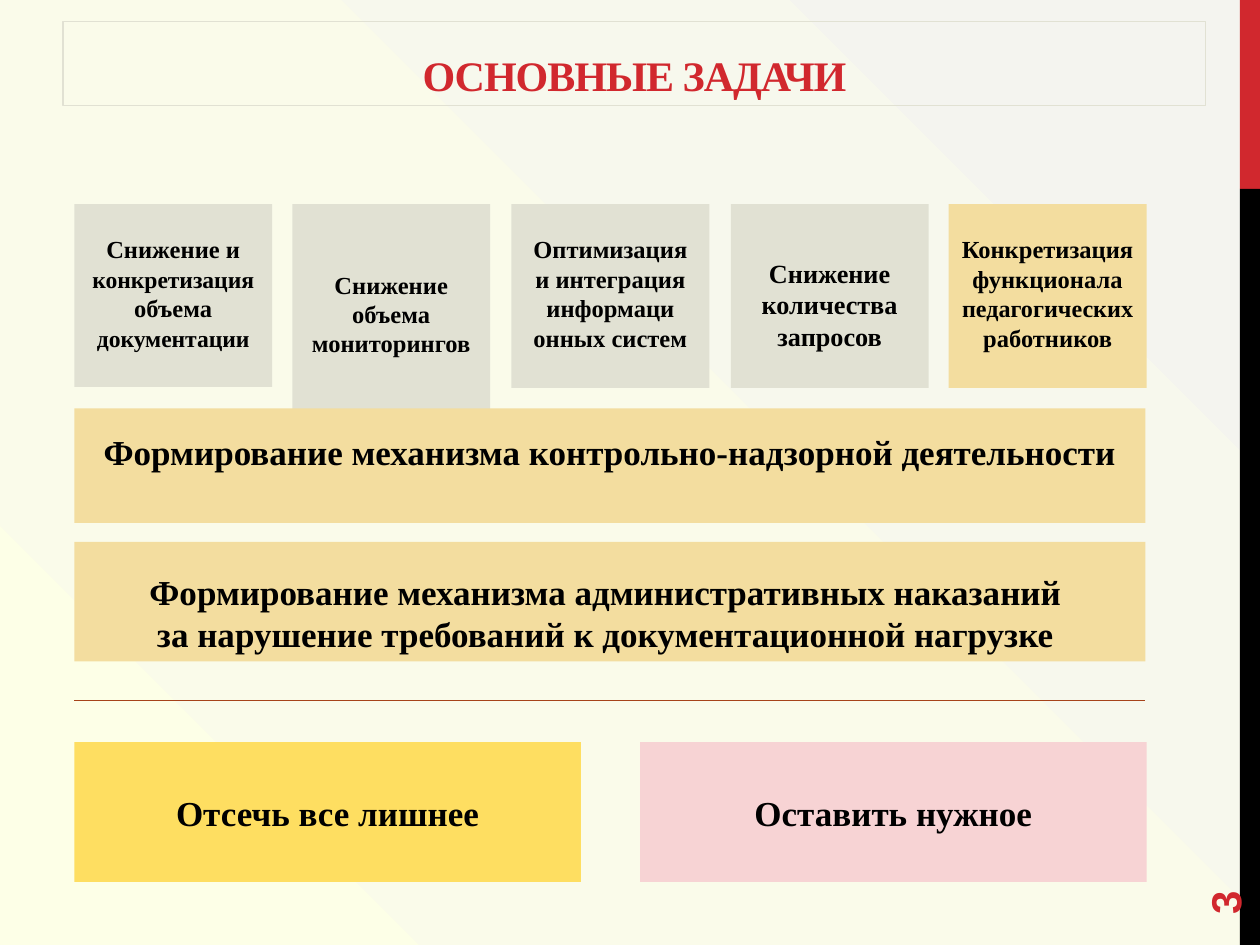
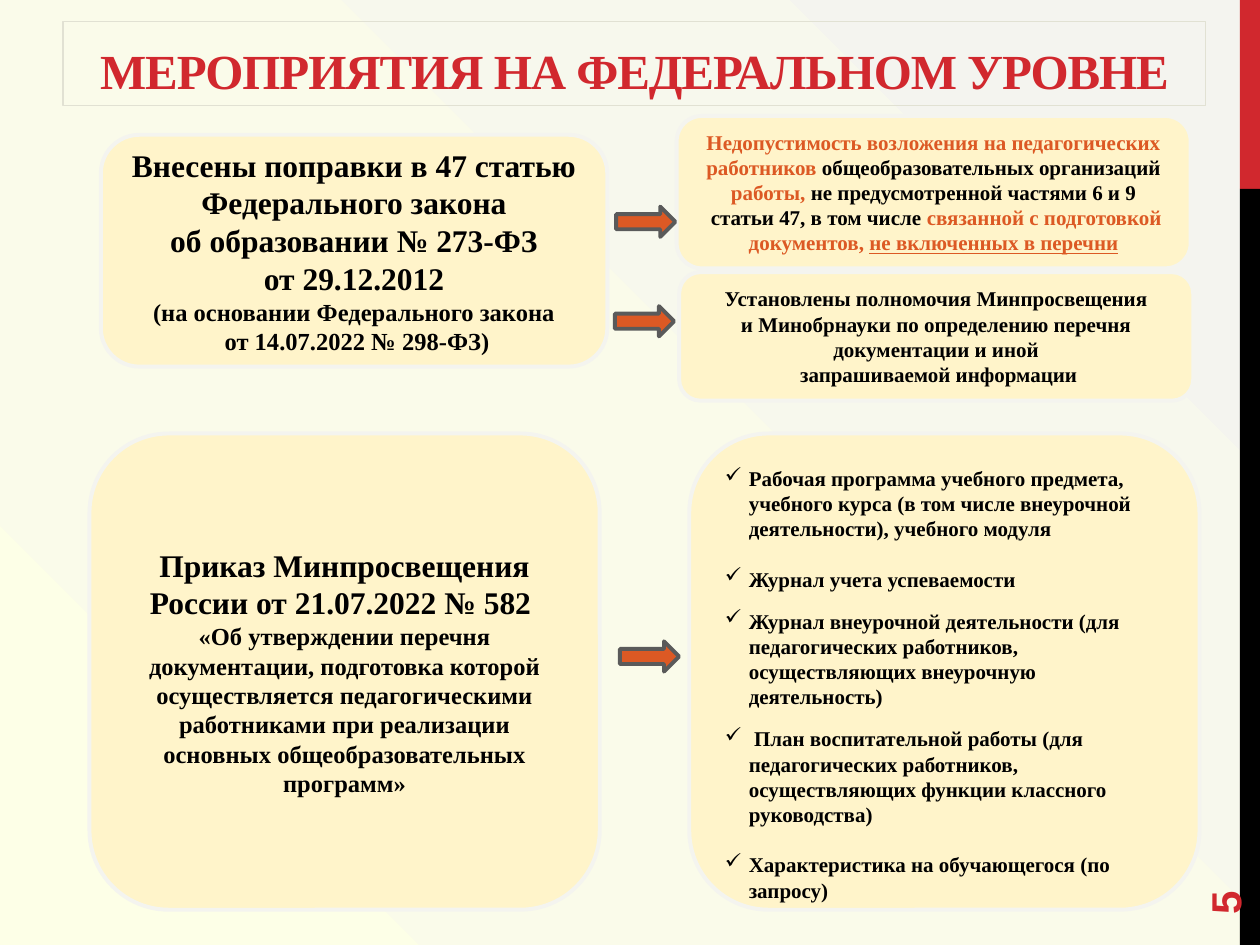
from pptx import Presentation
from pptx.dml.color import RGBColor
from pptx.enum.shapes import MSO_CONNECTOR, MSO_SHAPE
from pptx.enum.text import MSO_ANCHOR, MSO_AUTO_SIZE, PP_ALIGN
from pptx.oxml import parse_xml
from pptx.oxml.ns import nsdecls
from pptx.util import Emu, Pt

RECTANGLE = MSO_SHAPE.RECTANGLE
ROUNDED = MSO_SHAPE.ROUNDED_RECTANGLE
ARROW = MSO_SHAPE.RIGHT_ARROW
STRAIGHT = MSO_CONNECTOR.STRAIGHT
TOP, MIDDLE, BOTTOM = MSO_ANCHOR.TOP, MSO_ANCHOR.MIDDLE, MSO_ANCHOR.BOTTOM
LEFT, CENTER = PP_ALIGN.LEFT, PP_ALIGN.CENTER
NO_AUTOFIT = MSO_AUTO_SIZE.NONE

EMU_PER_PX = 9144
SERIF, SANS = "Times New Roman", "Arial"
LINE_RATIO = 1.2
RED, BLACK, ORANGE = "D1282E", "000000", "DC5924"
GREY, SAND, YELLOW, PINK = "E1E1D3", "F3DD9F", "FEDE61", "F7D3D4"
CREAM, CREAM_EDGE, ARROW_EDGE, RULE = "FFF4CA", "F4F4EF", "5A5A5A", "A6431A"
BACKGROUND_STOPS = ((0, "FDFFE7"), (38, "FAFBEA"), (99, "F4F4EF"))

TASKS = (
    ([("Снижение и ", 14), ("конкретизация", 13.5), (" объема ", 14),
      ("документации", 13.5)], 14, 145, 24, GREY),
    ("Снижение объема мониторингов", 14, 175, 52, GREY),
    ("Оптимизация и интеграция информаци\nонных систем", 14, 146, 24, GREY),
    ("Снижение количества запросов", 15, 146, 42, GREY),
    ([("Конкретизация функционала ", 14), ("педагогических", 13.8),
      (" работников", 14)], 14, 146, 24, SAND),
)
BARS = (
    ("Формирование механизма контрольно-надзорной деятельности", 324, 91, 18),
    ("Формирование механизма административных наказаний \n"
     "за нарушение требований к документационной нагрузке ", 430, 95, 23),
)
GOALS = (("Отсечь все лишнее", 59, YELLOW), ("Оставить нужное", 508, PINK))

AMENDMENT = (
    ("Внесены поправки в 47 статью Федерального закона", 18),
    ("об образовании № 273-ФЗ", 18),
    ("от 29.12.2012", 18),
    ("(на основании Федерального закона", 14),
    (" от 14.07.2022 № 298-ФЗ)", 14),
)
ORDER = (
    ("Приказ Минпросвещения России от 21.07.2022 № 582 ", 18),
    ("«Об утверждении перечня документации, подготовка которой осуществляется "
     "педагогическими работниками при реализации основных "
     "общеобразовательных программ»", 14),
)
POWERS = (
    ("Установлены полномочия Минпросвещения", 12),
    ("и Минобрнауки по определению перечня документации и иной", 12),
    (" запрашиваемой информации", 12),
)
PROHIBITION = (
    ([("Недопустимость возложения на педагогических работников ", 12, ORANGE),
      ("общеобразовательных организаций ", 12), ("работы,", 12, ORANGE),
      (" не предусмотренной частями 6 и 9", 12)], 12),
    ([(" статьи 47, в том числе ", 12),
      ("связанной с подготовкой документов, ", 12, ORANGE),
      ("не включенных в перечни", 12, ORANGE, True)], 12),
)
DOCUMENTS = (
    ("Рабочая программа учебного предмета, учебного курса (в том числе "
     "внеурочной деятельности), учебного модуля", 14.4),
    ("Журнал учета успеваемости", 9.6),
    ("Журнал внеурочной деятельности (для педагогических работников, "
     "осуществляющих внеурочную деятельность)", 9.6),
    (" План воспитательной работы (для педагогических работников, "
     "осуществляющих функции классного руководства)", 14.4),
    ("Характеристика на обучающегося (по запросу)", 0),
)


def px(value):
    """Convert whole px into EMU."""
    return Emu(value * EMU_PER_PX)


def color(hex_value):
    """Return the RGB colour of a hex string."""
    return RGBColor.from_string(hex_value)


def format_run(run, size, hex_value=BLACK, underline=None, font=SERIF):
    """Apply the bold text style to a run."""
    run.font.name = font
    run.font.size = Pt(size)
    run.font.bold = True
    run.font.underline = underline
    run.font.color.rgb = color(hex_value)


def write_paragraphs(shape, paragraphs, align=CENTER):
    """Write (content, size) paragraphs, the content being text or styled runs."""
    frame = shape.text_frame
    for index, (content, size) in enumerate(paragraphs):
        paragraph = frame.add_paragraph() if index else frame.paragraphs[0]
        paragraph.alignment = align
        paragraph.line_spacing = Pt(size * LINE_RATIO)
        runs = [(content, size)] if isinstance(content, str) else content
        for text, *style in runs:
            run = paragraph.add_run()
            run.text = text
            format_run(run, *style)


def add_box(slide, kind, box, fill, edge=None, anchor=MIDDLE, top_inset=5):
    """Add a filled preset shape with an optional outline."""
    shape = slide.shapes.add_shape(kind, *map(px, box))
    shape.shadow.inherit = False
    shape.fill.solid()
    shape.fill.fore_color.rgb = color(fill)
    if edge:
        shape.line.color.rgb = color(edge)
        shape.line.width = Pt(2.25)
    else:
        shape.line.fill.background()
    frame = shape.text_frame
    frame.word_wrap = True
    frame.vertical_anchor = anchor
    frame.margin_top = px(top_inset)
    return shape


def add_panel(slide, box, content, size, fill, top_inset):
    """Add a rectangle whose centred text starts below the top inset."""
    shape = add_box(slide, RECTANGLE, box, fill, None, TOP, top_inset)
    texts = content.split("\n") if isinstance(content, str) else [content]
    write_paragraphs(shape, [(text, size) for text in texts])


def add_card(slide, box, paragraphs):
    """Add a rounded cream card with centred text."""
    write_paragraphs(add_box(slide, ROUNDED, box, CREAM, CREAM_EDGE), paragraphs)


def add_checklist(slide, box, items):
    """Add a rounded card with a list of ticked items."""
    shape = add_box(slide, ROUNDED, box, CREAM, CREAM_EDGE, TOP, 7)
    write_paragraphs(shape, [(text, 12) for text, _ in items], LEFT)
    for paragraph, (_, gap) in zip(shape.text_frame.paragraphs, items):
        paragraph.space_after = Pt(gap)
        properties = paragraph._p.get_or_add_pPr()
        properties.set("marL", str(px(19)))
        properties.set("indent", str(-px(19)))
        properties.append(parse_xml(f'<a:buChar {nsdecls("a")} char="✓"/>'))


def add_rule(slide, left, right, y):
    """Add a thin horizontal line."""
    line = slide.shapes.add_connector(STRAIGHT, px(left), px(y), px(right), px(y))
    line.line.color.rgb = color(RULE)
    line.line.width = Pt(1)
    line._element.spPr.append(parse_xml(f'<a:effectLst {nsdecls("a")}/>'))


def set_background(master):
    """Give the slide master its radial gradient."""
    stops = "".join(
        f'<a:gs pos="{position * 1000}"><a:srgbClr val="{value}"/></a:gs>'
        for position, value in BACKGROUND_STOPS)
    common = master.element.cSld
    if common.bg is not None:
        common.remove(common.bg)
    common.insert(0, parse_xml(
        f'<p:bg {nsdecls("p", "a")}><p:bgPr><a:gradFill rotWithShape="1">'
        f'<a:gsLst>{stops}</a:gsLst><a:path path="circle">'
        '<a:fillToRect l="0" t="100000" r="100000" b="0"/></a:path>'
        '</a:gradFill><a:effectLst/></p:bgPr></p:bg>'))


def add_page_number(slide, number):
    """Add the page number turned along the side band."""
    text_box = slide.shapes.add_textbox(px(900), px(644), px(144), px(40))
    text_box.rotation = 270
    frame = text_box.text_frame
    frame.word_wrap = True
    frame.vertical_anchor = MIDDLE
    frame.text = number
    format_run(frame.paragraphs[0].runs[0], 24, RED, font=SANS)


def add_titled_slide(presentation, title_text, title_size, number):
    """Add a slide with side bands, page number and framed title."""
    slide = presentation.slides.add_slide(presentation.slide_layouts[5])
    add_box(slide, RECTANGLE, (984, 0, 16, 150), RED)
    add_box(slide, RECTANGLE, (984, 150, 16, 600), BLACK)
    add_page_number(slide, number)
    title = slide.shapes.title
    title.left, title.top, title.width, title.height = map(px, (50, 17, 907, 67))
    title.line.color.rgb = color(GREY)
    title.line.width = Pt(0.75)
    frame = title.text_frame
    frame.text = title_text
    frame.auto_size = NO_AUTOFIT
    frame.vertical_anchor = BOTTOM
    paragraph = frame.paragraphs[0]
    paragraph.alignment = CENTER
    run = paragraph.runs[0]
    format_run(run, title_size, RED)
    run.font._element.set("spc", "-60")
    return slide


def build_tasks(presentation):
    """Build the slide of main tasks."""
    slide = add_titled_slide(presentation, "ОСНОВНЫЕ ЗАДАЧИ", 24, "3")
    for index, (content, size, height, inset, fill) in enumerate(TASKS):
        left = round(59 + index * 173.5)
        add_panel(slide, (left, 162, 157, height), content, size, fill, inset)
    for text, top, height, inset in BARS:
        add_panel(slide, (59, top, 850, height), text, 20, SAND, inset)
    add_rule(slide, 59, 909, 556)
    for text, left, fill in GOALS:
        add_panel(slide, (left, 589, 402, 111), text, 20, fill, 39)


def build_measures(presentation):
    """Build the slide of federal measures."""
    slide = add_titled_slide(
        presentation, "МЕРОПРИЯТИЯ НА ФЕДЕРАЛЬНОМ УРОВНЕ", 28, "5")
    add_card(slide, (80, 107, 402, 184), AMENDMENT)
    add_card(slide, (71, 344, 405, 378), ORDER)
    add_checklist(slide, (547, 344, 405, 378), DOCUMENTS)
    add_card(slide, (539, 216, 408, 102), POWERS)
    add_card(slide, (537, 92, 408, 121), PROHIBITION)
    for left, top in ((492, 509), (489, 164), (488, 243)):
        add_box(slide, ARROW, (left, top, 47, 24), ORANGE, ARROW_EDGE)


def main():
    """Build and save the presentation."""
    presentation = Presentation()
    presentation.slide_width, presentation.slide_height = px(1000), px(750)
    set_background(presentation.slide_master)
    build_tasks(presentation)
    build_measures(presentation)
    presentation.save("out.pptx")


if __name__ == "__main__":
    main()
